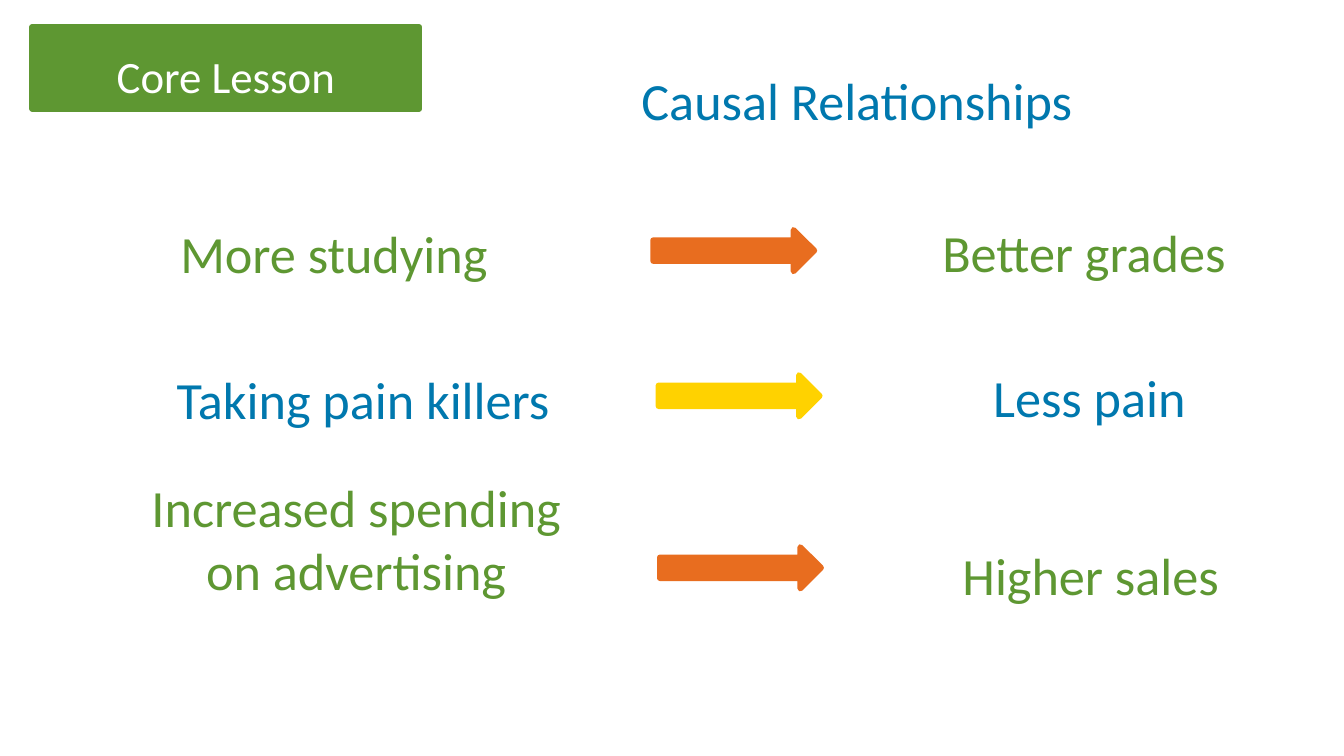
from pptx import Presentation
from pptx.dml.color import RGBColor
from pptx.enum.shapes import MSO_SHAPE
from pptx.enum.text import MSO_ANCHOR, MSO_AUTO_SIZE, PP_ALIGN
from pptx.util import Inches, Pt

GREEN, BLUE, ORANGE, YELLOW, WHITE = "5E9732", "0078AE", "E86D1F", "FFD200", "FFFFFF"


def color(value):
    """Turn a hex string into a colour."""
    return RGBColor.from_string(value)


def write(shape, text, font_color, size=28, anchor=MSO_ANCHOR.TOP):
    """Put one centred paragraph into a shape."""
    frame = shape.text_frame
    frame.word_wrap = True
    frame.auto_size = MSO_AUTO_SIZE.NONE
    frame.vertical_anchor = anchor
    frame.text = text
    paragraph = frame.paragraphs[0]
    paragraph.alignment = PP_ALIGN.CENTER
    paragraph.space_before = Pt(0)
    paragraph.font.name = "Calibri"
    paragraph.font.size = Pt(size)
    paragraph.font.color.rgb = color(font_color)


def add_block(slide, preset, left, top, width, height, fill):
    """Add a preset shape with fill and outline in one colour."""
    shape = slide.shapes.add_shape(
        preset, Inches(left), Inches(top), Inches(width), Inches(height))
    shape.shadow.inherit = False
    shape.fill.solid()
    shape.fill.fore_color.rgb = color(fill)
    shape.line.color.rgb = color(fill)
    shape.line.width = Pt(3)
    return shape


def add_label(slide, left, top, width, height, text, font_color):
    """Add a centred text box."""
    box = slide.shapes.add_textbox(
        Inches(left), Inches(top), Inches(width), Inches(height))
    write(box, text, font_color)


def add_tag(slide, left, top, width, height, text):
    """Add the green section tag."""
    tag = add_block(slide, MSO_SHAPE.RECTANGLE, left, top, width, height, GREEN)
    write(tag, text, WHITE, 24, MSO_ANCHOR.BOTTOM)


def add_title(slide, left, top, width, height, text):
    """Move and format the title placeholder."""
    title = slide.shapes.title
    title.left, title.top = Inches(left), Inches(top)
    title.width, title.height = Inches(width), Inches(height)
    write(title, text, BLUE)


def add_relationship(slide, left, top, cause, effect, text_color, arrow_color,
                     cause_width=3.47, cause_height=0.57, cause_shift=0.01,
                     arrow_shift=0.12):
    """Add one row: cause, arrow and effect."""
    add_label(slide, left, top + cause_shift, cause_width, cause_height,
              cause, text_color)
    add_block(slide, MSO_SHAPE.RIGHT_ARROW, left + 4.11, top + arrow_shift,
              1.2, 0.31, arrow_color)
    add_label(slide, left + 5.58, top, 3.47, 0.57, effect, text_color)


def main():
    """Build and save the slide."""
    presentation = Presentation()
    presentation.slide_width = Inches(10)
    presentation.slide_height = presentation.slide_width * 9 // 16
    slide = presentation.slides.add_slide(presentation.slide_layouts[5])
    add_tag(slide, 0.24, 0.2, 2.88, 0.61, "Core Lesson")
    add_title(slide, 3.99, 0.46, 4.77, 0.36, "Causal Relationships")
    add_relationship(slide, 0.75, 1.59, "More studying", "Better grades",
                     GREEN, ORANGE)
    add_relationship(slide, 0.79, 2.67, "Taking pain killers", "Less pain",
                     BLUE, YELLOW, cause_width=3.82)
    add_relationship(slide, 0.8, 3.99, "Increased spending on advertising",
                     "Higher sales", GREEN, ORANGE, cause_width=3.7,
                     cause_height=1.51, cause_shift=-0.5, arrow_shift=0.08)
    presentation.save("out.pptx")


if __name__ == "__main__":
    main()
